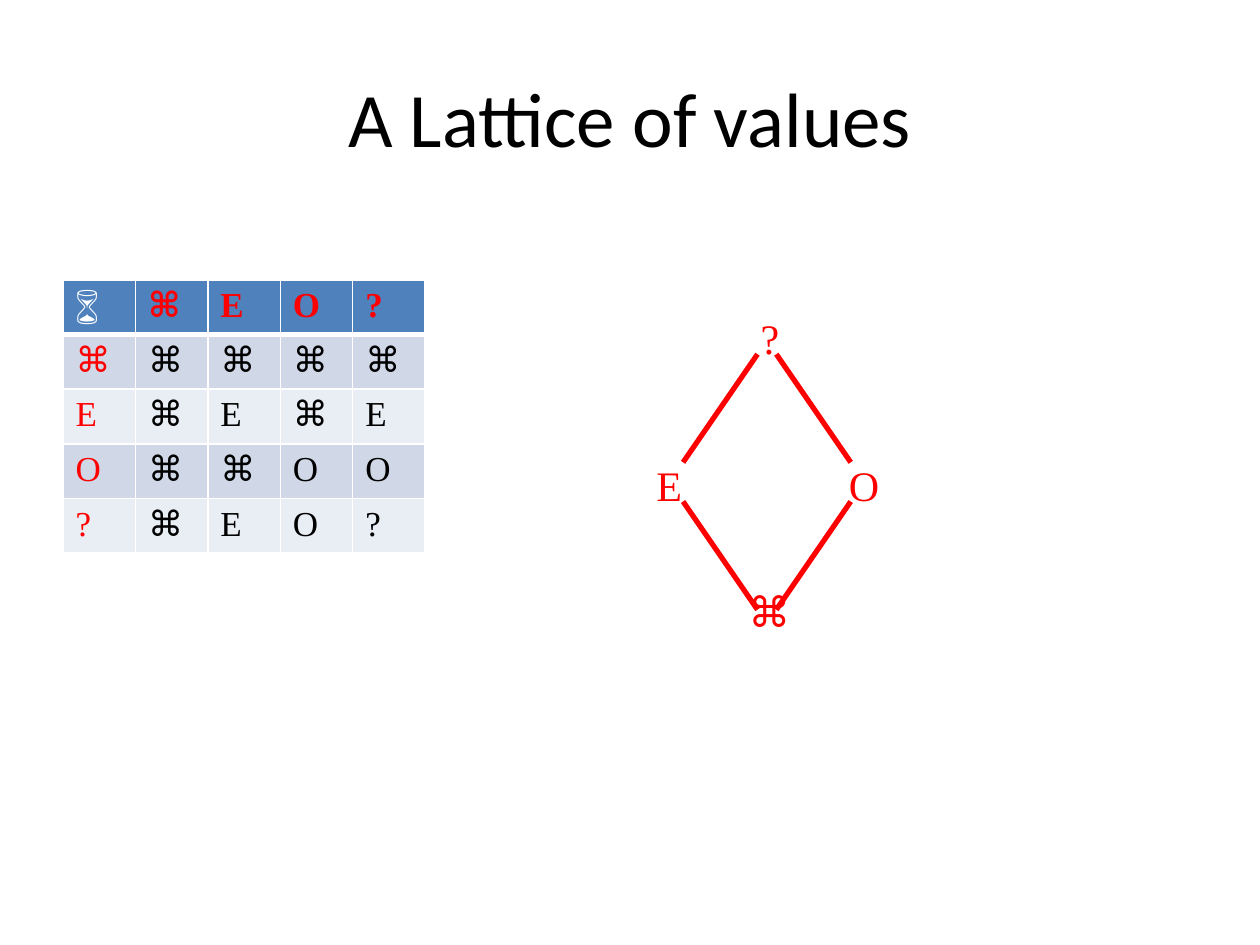
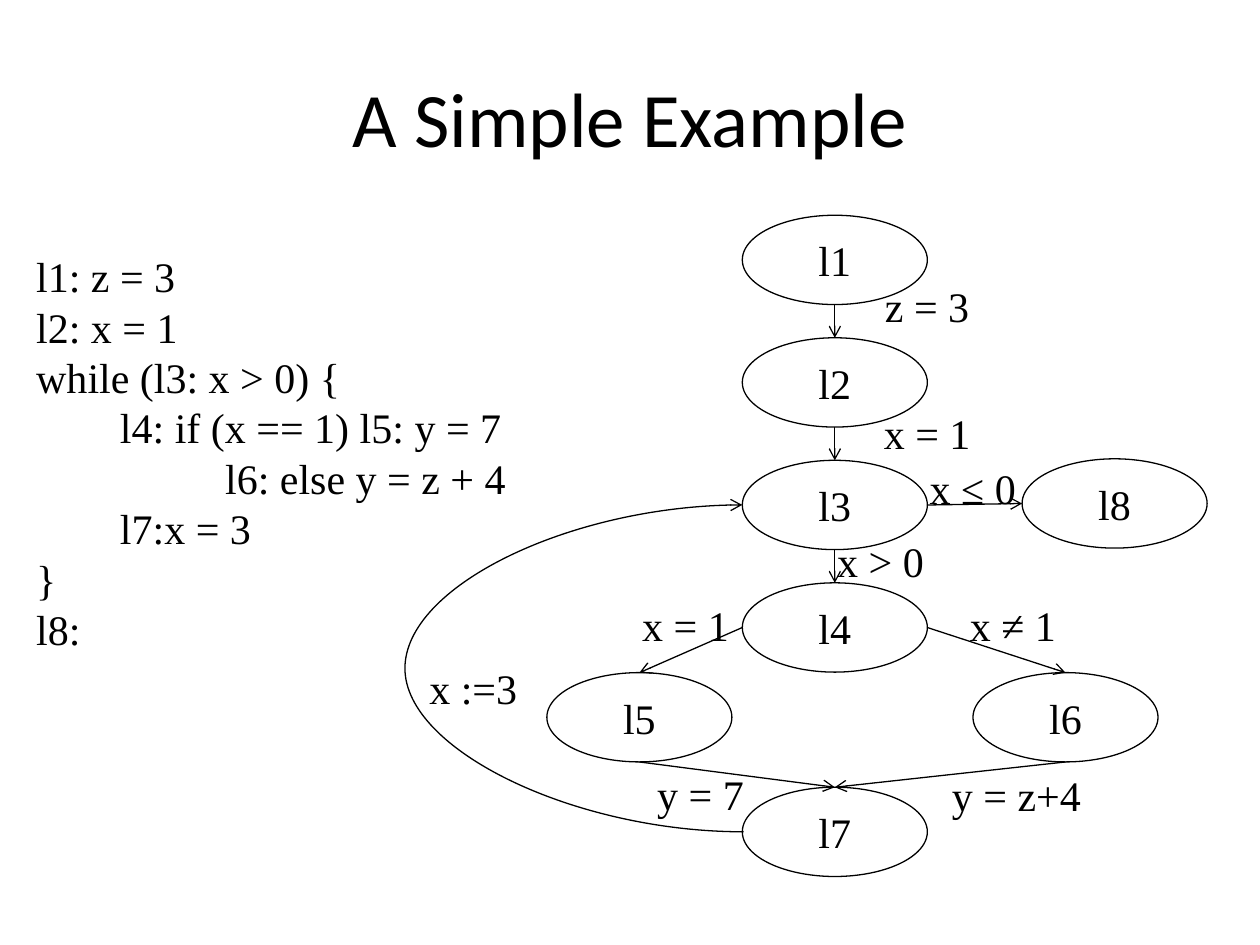
from dataclasses import dataclass

from lxml import etree
from pptx import Presentation
from pptx.dml.color import RGBColor
from pptx.enum.shapes import MSO_CONNECTOR, MSO_SHAPE
from pptx.enum.text import MSO_ANCHOR, PP_ALIGN
from pptx.oxml.ns import qn
from pptx.util import Cm, Pt

STRAIGHT, CURVE = MSO_CONNECTOR.STRAIGHT, MSO_CONNECTOR.CURVE
OVAL = MSO_SHAPE.OVAL
MIDDLE, TOP = MSO_ANCHOR.MIDDLE, MSO_ANCHOR.TOP
CENTER, LEFT = PP_ALIGN.CENTER, PP_ALIGN.LEFT


@dataclass(frozen=True)
class Theme:
    black: str = "000000"
    white: str = "FFFFFF"
    red: str = "FF0000"
    header: str = "4F81BD"
    bands: tuple = ("D0D8E8", "E9EDF4")
    title_font: str = "Calibri"
    body_font: str = "Times New Roman"
    title_size: int = 44
    body_size: int = 24
    table_size: int = 20


THEME = Theme()

# Content of the lattice slide; lengths are centimetres
MEET_TABLE = [
    "⌛⌘EO?",
    "⌘⌘⌘⌘⌘",
    "E⌘E⌘E",
    "O⌘⌘OO",
    "?⌘EO?",
]
TABLE_LEFT, TABLE_TOP, COLUMN_WIDTH, ROW_HEIGHT = 1.27, 5.64, 1.46, 1.1
LATTICE_NODES = [  # text, centre x, top
    ("?", 15.52, 6.17),
    ("E", 13.49, 9.14),
    ("O", 17.42, 9.14),
    ("⌘", 15.47, 11.68),
]
LATTICE_AXIS, EDGE_NEAR, EDGE_FAR = 15.46, 0.19, 1.69
LATTICE_EDGES = [(7.14, 9.32), (12.29, 10.11)]  # y near the axis, y far from it

# Content of the flow graph slide
CODE = [  # indent, line
    (0, "l1: z = 3"),
    (0, "l2: x = 1"),
    (0, "while (l3: x > 0) {"),
    (1.69, "l4: if (x == 1) l5: y = 7"),
    (3.81, "l6: else y = z + 4"),
    (1.69, "l7:x = 3"),
    (0, "}"),
    (0, "l8:"),
]
NODE_WIDTH, NODE_HEIGHT = 3.73, 1.8
SPINE, SPINE_TOP, SPINE_STEP = 16.83, 4.34, 2.47
FLOW_NODES = {f"l{i + 1}": (SPINE, SPINE_TOP + i * SPINE_STEP) for i in range(4)}
FLOW_NODES |= {  # centre x, top
    "l5": (12.89, 13.56),
    "l6": (21.48, 13.56),
    "l7": (SPINE, 15.87),
    "l8": (22.47, 9.25),
}
OVAL_SITES = {"top": 0, "left": 2, "bottom": 4, "right": 6}
FLOW_EDGES = [
    ("l1", "bottom", "l2", "top"),
    ("l2", "bottom", "l3", "top"),
    ("l3", "bottom", "l4", "top"),
    ("l3", "right", "l8", "left"),
    ("l4", "left", "l5", "top"),
    ("l4", "right", "l6", "top"),
    ("l5", "bottom", "l7", "top"),
    ("l6", "bottom", "l7", "top"),
]
LOOP_BULGE, LOOP_OFFSET = 6.83, 0.03
FLOW_LABELS = [  # text, centre x, top, width
    ("z = 3", 18.69, 5.54, 2.79),
    ("x = 1", 18.69, 8.1, 2.79),
    ("x ≤ 0", 19.61, 9.19, 2.79),
    ("x > 0", 17.75, 10.67, 2.79),
    ("x ≠ 1", 20.42, 11.96, 2.79),
    ("x = 1", 13.82, 11.96, 2.79),
    ("y = 7", 14.12, 15.37, 2.79),
    ("y = z+4", 20.49, 15.39, 4.29),
    ("x :=3", 9.54, 13.23, 4.29),
]


# Shared helpers
def color(value):
    return RGBColor.from_string(value)


def write(para, text, ink=THEME.black, size=THEME.body_size,
          font=THEME.body_font, bold=False, align=CENTER):
    para.alignment = align
    span = para.add_run()
    span.text = text
    span.font.name, span.font.size, span.font.bold = font, Pt(size), bold
    span.font.color.rgb = color(ink)


def add_page(deck, title):
    page = deck.slides.add_slide(deck.slide_layouts[5])
    box = page.shapes.title
    box.left, box.top, box.width, box.height = Cm(1.27), Cm(0.76), Cm(22.86), Cm(3.18)
    box.text_frame.vertical_anchor = MIDDLE
    write(box.text_frame.paragraphs[0], title, size=THEME.title_size,
          font=THEME.title_font)
    return page


def add_label(page, text, center, top, width, ink=THEME.black):
    box = page.shapes.add_textbox(Cm(center - width / 2), Cm(top), Cm(width), Cm(1.27))
    box.text_frame.word_wrap = True
    write(box.text_frame.paragraphs[0], text, ink)


def add_line(page, start, end, ink, weight, kind=STRAIGHT, arrow=False):
    line = page.shapes.add_connector(kind, *(Cm(value) for value in (*start, *end)))
    line.line.color.rgb = color(ink)
    line.line.width = Pt(weight)
    properties = line._element.spPr
    if arrow:
        etree.SubElement(properties.find(qn("a:ln")), qn("a:tailEnd"), type="arrow")
    etree.SubElement(properties, qn("a:effectLst"))
    return line


def set_borders(cell, bottom):
    properties = cell._tc.get_or_add_tcPr()
    weights = {"a:lnL": 1, "a:lnR": 1, "a:lnT": 1, "a:lnB": bottom}
    for index, (tag, weight) in enumerate(weights.items()):
        border = etree.Element(qn(tag), w=str(Pt(weight)))
        fill = etree.SubElement(border, qn("a:solidFill"))
        etree.SubElement(fill, qn("a:srgbClr"), val=THEME.white)
        properties.insert(index, border)


# Lattice slide
def add_meet_table(page):
    count = len(MEET_TABLE)
    table = page.shapes.add_table(
        count, count, Cm(TABLE_LEFT), Cm(TABLE_TOP),
        Cm(count * COLUMN_WIDTH), Cm(count * ROW_HEIGHT)).table
    for column in table.columns:
        column.width = Cm(COLUMN_WIDTH)
    for i, symbols in enumerate(MEET_TABLE):
        table.rows[i].height = Cm(ROW_HEIGHT)
        for j, symbol in enumerate(symbols):
            cell = table.cell(i, j)
            cell.fill.solid()
            cell.fill.fore_color.rgb = color(THEME.bands[(i - 1) % 2] if i else THEME.header)
            set_borders(cell, bottom=1 if i else 3)
            if i == j == 0:
                ink = THEME.white
            else:
                ink = THEME.black if i and j else THEME.red
            write(cell.text_frame.paragraphs[0], symbol, ink, THEME.table_size,
                  bold=i == 0, align=LEFT)


def build_lattice(deck):
    page = add_page(deck, "A Lattice of values")
    for text, center, top in LATTICE_NODES:
        add_label(page, text, center, top, 1.27, THEME.red)
    for near_y, far_y in LATTICE_EDGES:
        for side in (-1, 1):
            add_line(page, (LATTICE_AXIS + side * EDGE_NEAR, near_y),
                     (LATTICE_AXIS + side * EDGE_FAR, far_y), THEME.red, 3)
    add_meet_table(page)


# Flow graph slide
def site_point(name, side):
    center, top = FLOW_NODES[name]
    across = {"left": -0.5, "right": 0.5}.get(side, 0)
    down = {"top": 0, "bottom": 1}.get(side, 0.5)
    return center + across * NODE_WIDTH, top + down * NODE_HEIGHT


def add_node(page, name):
    center, top = FLOW_NODES[name]
    node = page.shapes.add_shape(OVAL, Cm(center - NODE_WIDTH / 2), Cm(top),
                                 Cm(NODE_WIDTH), Cm(NODE_HEIGHT))
    node.shadow.inherit = False
    node.fill.background()
    node.line.color.rgb = color(THEME.black)
    node.line.width = Pt(0.75)
    node.text_frame.vertical_anchor = MIDDLE
    write(node.text_frame.paragraphs[0], name)
    return node


def add_edge(page, nodes, source, exit_side, target, entry_side):
    start, end = site_point(source, exit_side), site_point(target, entry_side)
    edge = add_line(page, start, end, THEME.black, 0.75, arrow=True)
    edge.begin_connect(nodes[source], 0)
    edge.end_connect(nodes[target], 0)
    # An oval has eight sites: number them and place the ends there
    for tag, side in (("a:stCxn", exit_side), ("a:endCxn", entry_side)):
        joint = next(edge._element.iter(qn(tag)))
        joint.set("idx", str(OVAL_SITES[side]))
    edge.begin_x, edge.begin_y = map(Cm, start)
    edge.end_x, edge.end_y = map(Cm, end)


def add_loop(page):
    x, start_y = site_point("l7", "left")
    end = site_point("l3", "left")
    loop = add_line(page, (x + LOOP_OFFSET, start_y), end, THEME.black, 0.75, CURVE, True)
    adjust = round(LOOP_BULGE / LOOP_OFFSET * 100000)
    guides = loop._element.spPr.find(qn("a:prstGeom")).get_or_add_avLst()
    etree.SubElement(guides, qn("a:gd"), name="adj1", fmla=f"val {adjust}")


def add_code(page):
    box = page.shapes.add_textbox(Cm(0.48), Cm(4.93), Cm(12.22), Cm(8.46))
    frame = box.text_frame
    frame.word_wrap = True
    frame.vertical_anchor = TOP
    for index, (indent, text) in enumerate(CODE):
        para = frame.add_paragraph() if index else frame.paragraphs[0]
        para.line_spacing = Pt(28.8)
        write(para, text, align=LEFT)
        para._p.get_or_add_pPr().set("marL", str(Cm(indent)))


def build_flow_graph(deck):
    page = add_page(deck, "A Simple Example")
    nodes = {name: add_node(page, name) for name in FLOW_NODES}
    for edge in FLOW_EDGES:
        add_edge(page, nodes, *edge)
    add_loop(page)
    for label in FLOW_LABELS:
        add_label(page, *label)
    add_code(page)


def main():
    deck = Presentation()
    deck.slide_width, deck.slide_height = Cm(25.4), Cm(19.05)
    build_lattice(deck)
    build_flow_graph(deck)
    deck.save("out.pptx")


if __name__ == "__main__":
    main()
